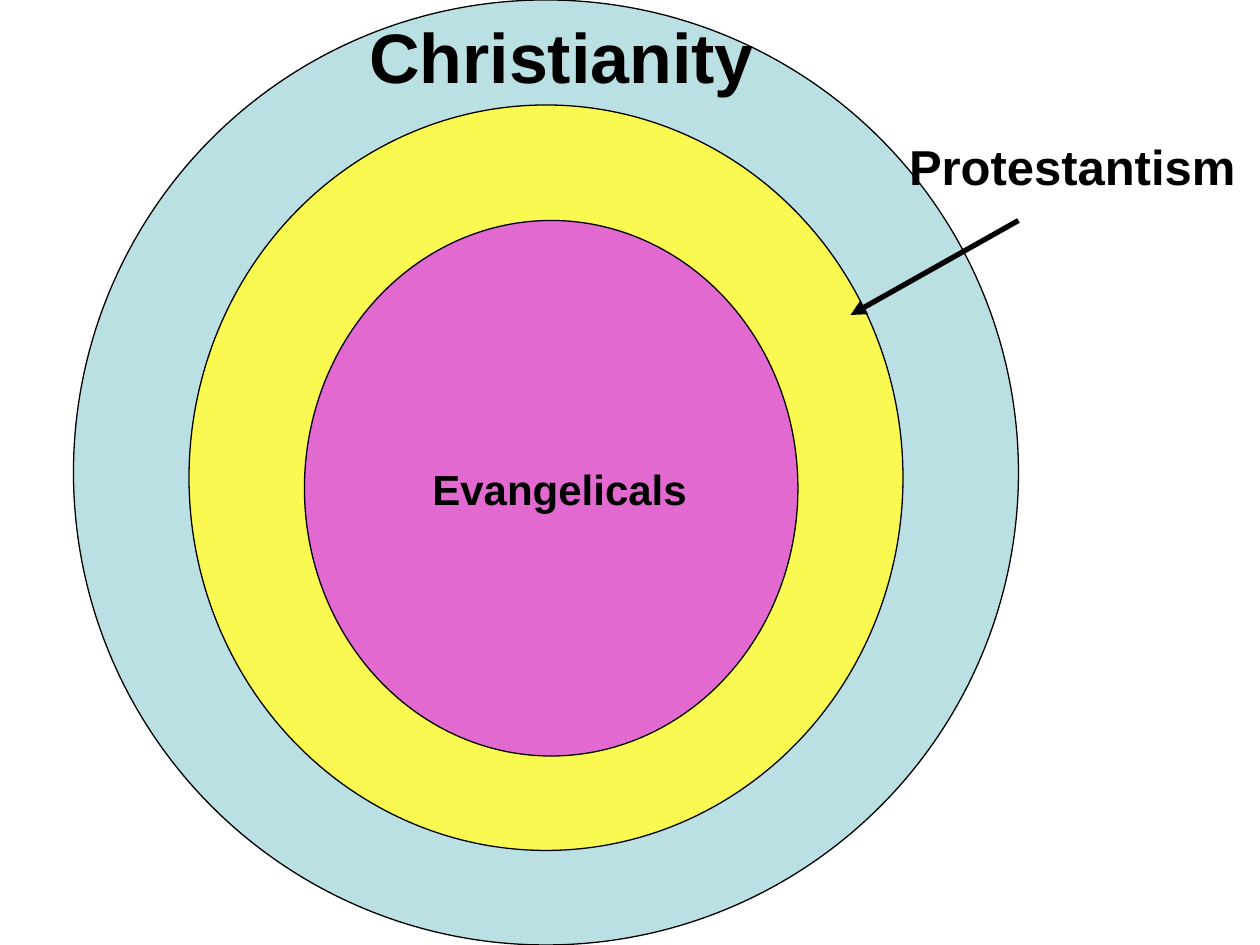
from lxml import etree
from pptx import Presentation, util as u
from pptx.dml.color import RGBColor
from pptx.enum import shapes, text
from pptx.oxml.ns import qn

COLORS = {"ink": "000000", "christianity": "BBE0E3",
          "protestantism": "F9F951", "evangelicals": "E169D0"}
FONT = "Arial"
COLUMNS, ROWS = 120, 90  # cells of a twelfth of an inch

# Grid cells: left, top, width, height; outermost circle first
CIRCLES = [
    ("christianity", (7, 0, 90, 90)),
    ("protestantism", (18, 10, 68, 71)),
    ("evangelicals", (29, 21, 47, 51)),
]
# Wording, point size, grid cells
LABELS = [
    ("Christianity", 40, (34, 0.7, 39.1, 9.3)),
    ("Protestantism", 28, (85.4, 12.4, 33.6, 6.8)),
    ("Evangelicals", 24, (40, 43.6, 26.6, 6)),
]
ARROW = (97, 21, 81, 30)  # from the Protestantism label to its ring

deck = Presentation()
deck.slide_width, deck.slide_height = u.Inches(10), u.Inches(7.5)
slide = deck.slides.add_slide(deck.slide_layouts[6])


def place(cells):
    """Turn alternating column and row counts into slide lengths."""
    units = (deck.slide_width / COLUMNS, deck.slide_height / ROWS)
    return [round(cell * units[i % 2]) for i, cell in enumerate(cells)]


def color(name):
    return RGBColor.from_string(COLORS[name])


def set_line(line, points):
    line.color.rgb = color("ink")
    line.width = u.Pt(points)


def add_circle(name, cells):
    circle = slide.shapes.add_shape(
        shapes.MSO_SHAPE.FLOWCHART_CONNECTOR, *place(cells))
    circle.shadow.inherit = False
    circle.fill.solid()
    circle.fill.fore_color.rgb = color(name)
    set_line(circle.line, 0.75)


def add_label(wording, size, cells):
    frame = slide.shapes.add_textbox(*place(cells)).text_frame
    frame.word_wrap = False
    frame.auto_size = text.MSO_AUTO_SIZE.SHAPE_TO_FIT_TEXT
    paragraph = frame.paragraphs[0]
    paragraph.text = wording
    font = paragraph.font
    font.name, font.size, font.bold = FONT, u.Pt(size), True
    font.color.rgb = color("ink")


def add_arrow(ends):
    arrow = slide.shapes.add_connector(
        shapes.MSO_CONNECTOR.STRAIGHT, *place(ends))
    set_line(arrow.line, 3)
    etree.SubElement(arrow.line._get_or_add_ln(), qn("a:tailEnd"), type="triangle")
    etree.SubElement(arrow._element.spPr, qn("a:effectLst"))


for circle in CIRCLES:
    add_circle(*circle)
for label in LABELS:
    add_label(*label)
add_arrow(ARROW)

deck.save("out.pptx")
